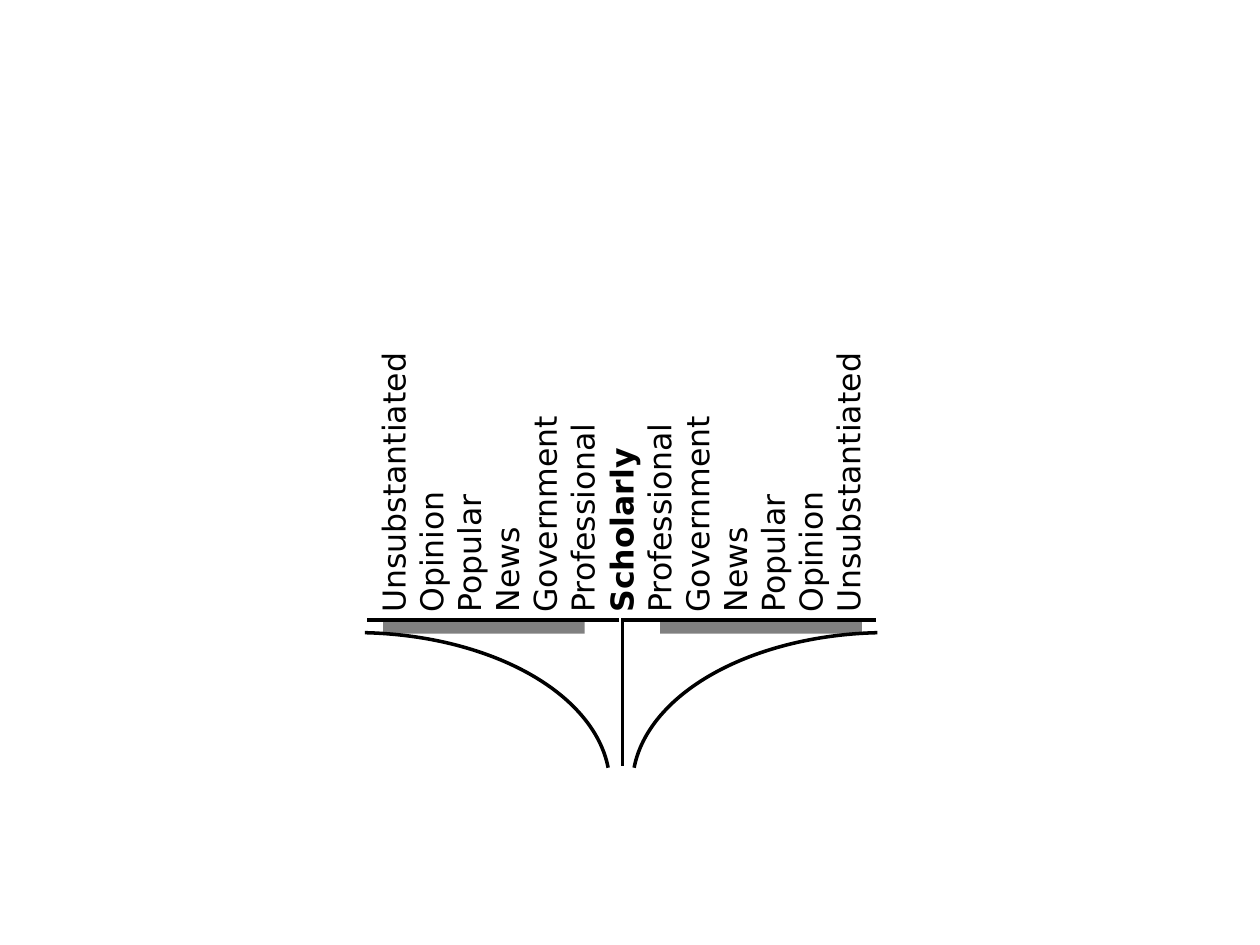
import pptx
import pptx.dml.color
import pptx.enum.shapes
import pptx.enum.text
import pptx.oxml
import pptx.oxml.ns
import pptx.util

Inches = pptx.util.Inches
Pt = pptx.util.Pt
Shapes = pptx.enum.shapes.MSO_SHAPE


def color(hex_value):
    return pptx.dml.color.RGBColor.from_string(hex_value)


class Diagram:
    """Style of the open-book diagram and the slide it is drawn on."""

    font_name = "DejaVu Sans"
    font_size = Pt(18)
    ink = "000000"
    shade = "808080"
    line_width = Pt(2)

    def __init__(self, slide):
        self.slide = slide

    def labels(self, left, top, width, height, words, bold_words=()):
        box = self.slide.shapes.add_textbox(
            Inches(left), Inches(top), Inches(width), Inches(height))
        box.rotation = 270
        frame = box.text_frame
        frame.word_wrap = True
        frame.auto_size = pptx.enum.text.MSO_AUTO_SIZE.SHAPE_TO_FIT_TEXT
        frame.text = "\n".join(words)
        for paragraph in frame.paragraphs:
            font = paragraph.font
            font.name = self.font_name
            font.size = self.font_size
            font.bold = paragraph.text in bold_words
            font.color.rgb = color(self.ink)

    def bar(self, left, top, width, height):
        shape = self.slide.shapes.add_shape(
            Shapes.RECTANGLE, Inches(left), Inches(top), Inches(width), Inches(height))
        shape.shadow.inherit = False
        shape.fill.solid()
        shape.fill.fore_color.rgb = color(self.shade)
        shape.line.fill.background()

    def line(self, x1, y1, x2, y2):
        connector = self.slide.shapes.add_connector(
            pptx.enum.shapes.MSO_CONNECTOR.STRAIGHT,
            Inches(x1), Inches(y1), Inches(x2), Inches(y2))
        connector.line.color.rgb = color(self.ink)
        connector.line.width = self.line_width
        connector.element.spPr.append(pptx.oxml.parse_xml(
            "<a:effectLst %s/>" % pptx.oxml.ns.nsdecls("a")))

    def arc(self, left, top, width, height, rotation, mirrored=False):
        shape = self.slide.shapes.add_shape(
            Shapes.ARC, Inches(left), Inches(top), Inches(width), Inches(height))
        shape.shadow.inherit = False
        shape.fill.background()
        shape.line.color.rgb = color(self.ink)
        shape.line.width = self.line_width
        shape.adjustments[0] = 164.353
        shape.adjustments[1] = 213.818
        shape.rotation = rotation
        if mirrored:
            shape.element.spPr.find(pptx.oxml.ns.qn("a:xfrm")).set("flipH", "1")


def main():
    presentation = pptx.Presentation()
    presentation.slide_width = Inches(10)
    presentation.slide_height = Inches(7.5)
    diagram = Diagram(presentation.slides.add_slide(presentation.slide_layouts[6]))

    # Source types, from the outer edge of the page to the spine
    source_types = ["Unsubstantiated", "Opinion", "Popular", "News",
                    "Government", "Professional"]
    center_type = "Scholarly"
    page_top = 4.92

    # Left page labels
    diagram.labels(2.79, 2.61, 2.48, 2.22, source_types)

    # Page shading
    for left in (3.04, 5.24):
        diagram.bar(left, page_top, 1.6, 0.11)

    # Page edges and spine
    diagram.line(4.93, page_top, 6.95, page_top)
    diagram.line(4.94, page_top, 4.94, 6.08)
    diagram.line(4.91, page_top, 2.91, page_top)

    # Spine and right page labels
    diagram.labels(4.6, 2.61, 2.48, 2.22,
                   [center_type] + source_types[::-1], [center_type])

    # Curved covers
    diagram.arc(5.83, 4.21, 2.42, 4.04, 270)
    diagram.arc(1.61, 4.21, 2.42, 4.04, 90, mirrored=True)

    presentation.save("out.pptx")


if __name__ == "__main__":
    main()
